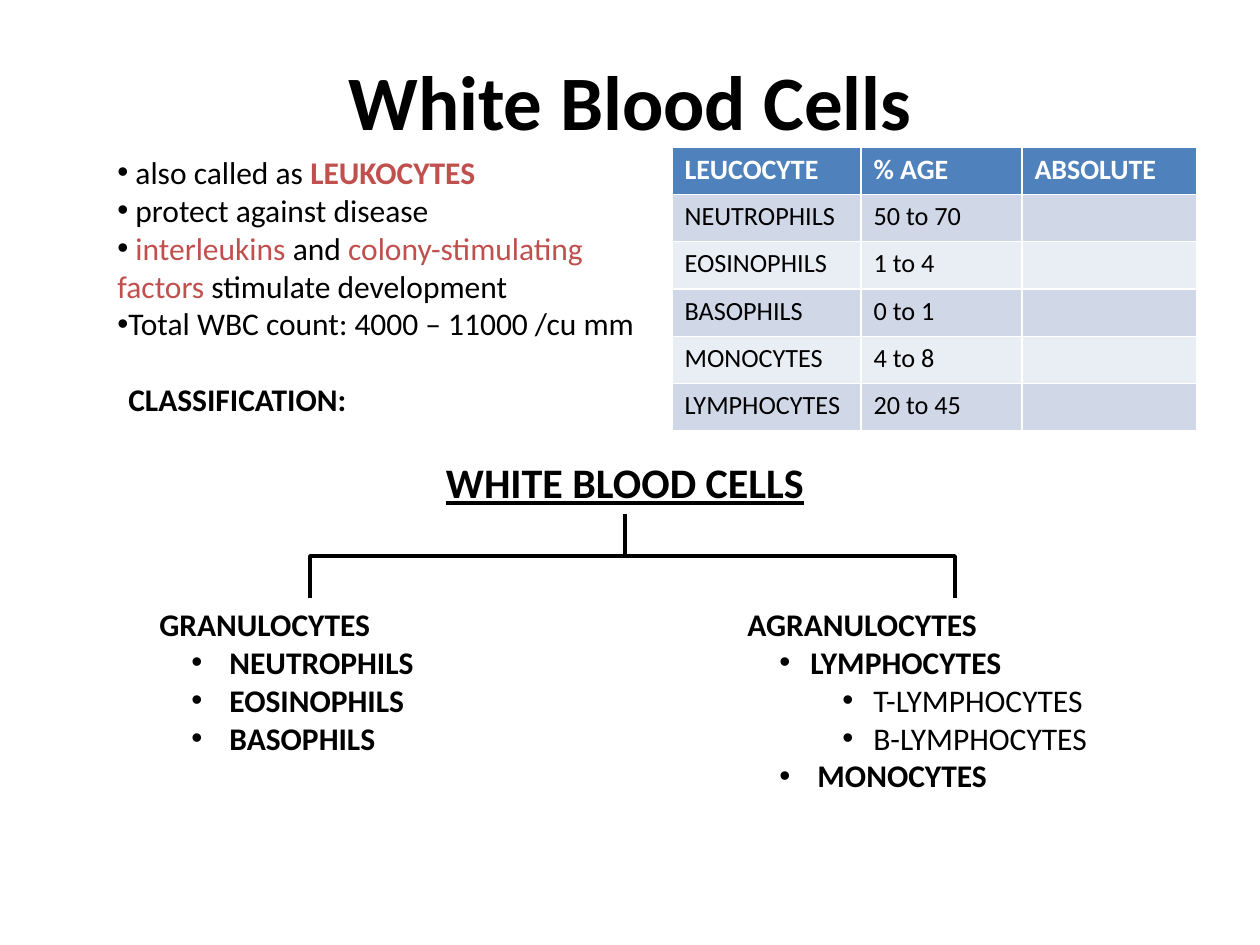
import lxml.etree
import pptx
import pptx.dml.color
import pptx.enum.shapes
import pptx.enum.text
import pptx.oxml.ns
import pptx.util

SCALE = 914400 / 126
BLACK, RED, WHITE, BLUE = "000000", "C0504D", "FFFFFF", "4F81BD"
BANDS = ["D0D8E8", "E9EDF4"]
CENTER = pptx.enum.text.PP_ALIGN.CENTER

FACTS = [
    [(" also called as ", None, None), ("LEUKOCYTES", RED, True)],
    [(" protect against disease", None, None)],
    [(" ", None, None), ("interleukins ", RED, None), ("and ", None, None),
     ("colony-stimulating factors", RED, None), (" stimulate development", None, None)],
    [("Total WBC count: 4000 – 11000 /cu mm", None, None)],
]
GRANULAR = [(0, "GRANULOCYTES"), (1, " NEUTROPHILS"), (1, " EOSINOPHILS"), (1, " BASOPHILS")]
AGRANULAR = [(0, "AGRANULOCYTES"), (1, "LYMPHOCYTES"), (2, "T-LYMPHOCYTES"),
             (2, "B-LYMPHOCYTES"), (1, " MONOCYTES")]
COUNTS = [
    ("LEUCOCYTE", "% AGE", "ABSOLUTE"),
    ("NEUTROPHILS", "50 to 70", ""),
    ("EOSINOPHILS", "1 to 4", ""),
    ("BASOPHILS", "0 to 1", ""),
    ("MONOCYTES", "4 to 8", ""),
    ("LYMPHOCYTES", "20 to 45", ""),
]


def px(num):
    """Turn pixels into EMU."""
    return pptx.util.Emu(round(num * SCALE))


def color(code):
    """Turn a hex string into a colour."""
    return pptx.dml.color.RGBColor.from_string(code)


def style(para, size, bold=False, tint=BLACK):
    """Set the font of a paragraph."""
    font = para.font
    font.name = "Calibri"
    font.size = pptx.util.Pt(size)
    font.bold = bold
    font.color.rgb = color(tint)


def bullet(para, left=0, hang=0):
    """Give a paragraph a round bullet with its indent."""
    props = para._p.get_or_add_pPr()
    props.set("marL", str(px(left)))
    props.set("indent", str(-px(hang)))
    name = pptx.oxml.ns.qn
    lxml.etree.SubElement(props, name("a:buFont")).set("typeface", "Arial")
    lxml.etree.SubElement(props, name("a:buChar")).set("char", "•")


def add_box(slide, left, top, width, height, count):
    """Add a wrapping text box and return its frame with count paragraphs."""
    frame = slide.shapes.add_textbox(px(left), px(top), px(width), px(height)).text_frame
    frame.word_wrap = True
    frame.auto_size = pptx.enum.text.MSO_AUTO_SIZE.SHAPE_TO_FIT_TEXT
    for _ in range(count - 1):
        frame.add_paragraph()
    return frame


def add_title(slide):
    """Add the slide title."""
    frame = add_box(slide, 95, 21, 1071, 158, 1)
    frame.auto_size = pptx.enum.text.MSO_AUTO_SIZE.NONE
    frame.vertical_anchor = pptx.enum.text.MSO_ANCHOR.MIDDLE
    para = frame.paragraphs[0]
    para.text = "White Blood Cells"
    para.alignment = CENTER
    style(para, 44, True)


def add_facts(slide):
    """Add the bulleted facts with coloured terms."""
    frame = add_box(slide, 105, 147, 577, 204, len(FACTS))
    for para, parts in zip(frame.paragraphs, FACTS):
        bullet(para)
        style(para, 18)
        for text, tint, bold in parts:
            run = para.add_run()
            run.text = text
            if tint:
                run.font.color.rgb = color(tint)
            if bold:
                run.font.bold = bold


def add_heads(slide):
    """Add the section label and the root of the tree."""
    label, root = add_box(slide, 116, 374, 1018, 140, 2).paragraphs
    label.text = "CLASSIFICATION:"
    style(label, 18, True)
    root.text = "WHITE BLOOD CELLS"
    root.alignment = CENTER
    root.space_before = pptx.util.Pt(22)
    style(root, 24, True)
    root.font.underline = True


def add_group(slide, left, width, height, items):
    """Add a nested list of cell types."""
    frame = add_box(slide, left, 599, width, height, len(items))
    for para, (level, text) in zip(frame.paragraphs, items):
        para.text = text
        para.level = level
        if level:
            bullet(para, 63 * level, 31)
        style(para, 18, level < 2)


def add_branch(slide, start, end, top, low):
    """Add an elbow line that leaves downwards, runs across and drops."""
    span, drop = abs(end - start), low - top
    left, right = (start + end - drop) / 2, (start + end + drop) / 2
    high, deep = (top + low - span) / 2, (top + low + span) / 2
    turn = 90
    if end > start:
        left, right, turn = right, left, 270
    kind = pptx.enum.shapes.MSO_CONNECTOR.ELBOW
    line = slide.shapes.add_connector(kind, px(left), px(high), px(right), px(deep))
    props = line._element.spPr
    props.xfrm.set("rot", str(turn * 60000))
    line.line.color.rgb = color(BLACK)
    line.line.width = pptx.util.Pt(2)
    lxml.etree.SubElement(props, pptx.oxml.ns.qn("a:effectLst"))


def add_counts(slide):
    """Add the table of leucocyte shares."""
    widths = [189, 161, 175]
    table = slide.shapes.add_table(len(COUNTS), len(widths), px(672), px(147),
                                   px(sum(widths)), px(284)).table
    for col, width in zip(table.columns, widths):
        col.width = px(width)
    for row, texts in enumerate(COUNTS):
        head = row == 0
        for col, text in enumerate(texts):
            cell = table.cell(row, col)
            cell.text = text
            cell.fill.solid()
            cell.fill.fore_color.rgb = color(BLUE if head else BANDS[(row - 1) % 2])
            style(cell.text_frame.paragraphs[0], 16 if head else 15, head,
                  WHITE if head else BLACK)


def main():
    """Build and save the slide."""
    deck = pptx.Presentation()
    deck.slide_width, deck.slide_height = px(1260), px(945)
    slide = deck.slides.add_slide(deck.slide_layouts[6])
    add_title(slide)
    add_facts(slide)
    add_group(slide, 147, 325, 165, GRANULAR)
    add_group(slide, 735, 441, 204, AGRANULAR)
    add_heads(slide)
    for end in (310, 955):
        add_branch(slide, 625, end, 514, 598)
    add_counts(slide)
    deck.save("out.pptx")


if __name__ == "__main__":
    main()
